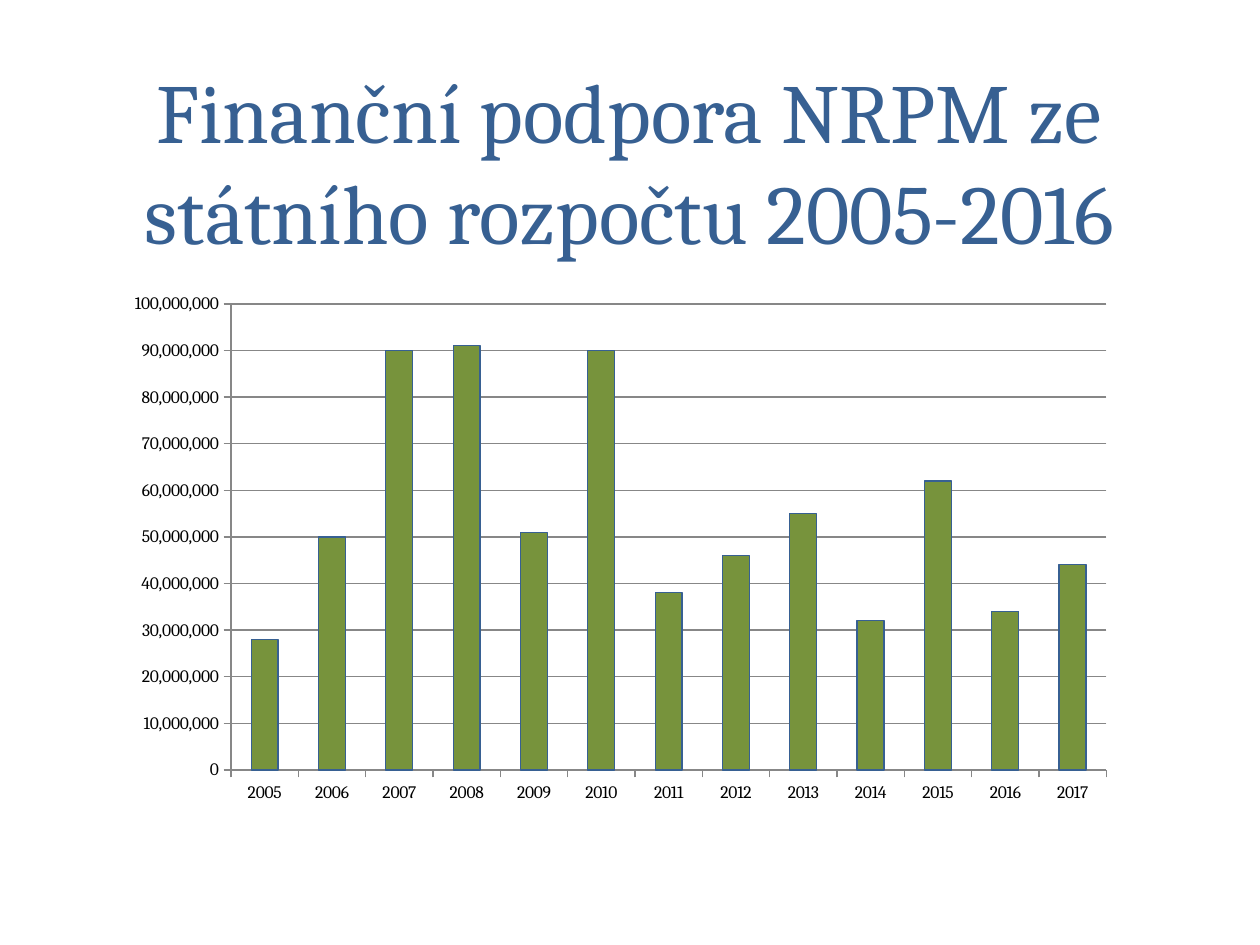
import pptx
import pptx.chart.data
import pptx.dml.color
import pptx.enum.chart
import pptx.enum.text
import pptx.util
from pptx.util import Pt

TITLE = "Finanční podpora NRPM ze státního rozpočtu 2005-2016"
FIRST_YEAR = 2005
MILLIONS = [28, 50, 90, 91, 51, 90, 38, 46, 55, 32, 62, 34, 44]
FONT = "Cambria"
BLUE, GREEN, GREY, BLACK = "376092", "77933C", "878787", "000000"


def color(hex_code):
    return pptx.dml.color.RGBColor.from_string(hex_code)


def style_font(font, size, hex_code):
    font.name = FONT
    font.size = Pt(size)
    font.color.rgb = color(hex_code)


def style_line(line, hex_code):
    line.color.rgb = color(hex_code)
    line.width = Pt(0.75)


def add_title(page):
    title = page.shapes.title
    title.left, title.top, title.width, title.height = Pt(43.2), Pt(34.6), Pt(632.9), Pt(113.8)
    frame = title.text_frame
    frame.text = TITLE
    frame.word_wrap = True
    frame.auto_size = pptx.enum.text.MSO_AUTO_SIZE.NONE
    frame.vertical_anchor = pptx.enum.text.MSO_ANCHOR.MIDDLE
    para = frame.paragraphs[0]
    para.alignment = pptx.enum.text.PP_ALIGN.CENTER
    style_font(para.font, 48, BLUE)


def add_support_chart(page):
    data = pptx.chart.data.CategoryChartData(number_format="#,##0")
    data.categories = [str(FIRST_YEAR + i) for i in range(len(MILLIONS))]
    data.add_series("Series 1", [value * 1_000_000 for value in MILLIONS])
    chart = page.shapes.add_chart(
        pptx.enum.chart.XL_CHART_TYPE.COLUMN_CLUSTERED,
        Pt(65.5), Pt(162), Pt(578.2), Pt(302.4), data).chart
    chart.has_legend = False
    chart.has_title = False
    style_font(chart.font, 10, BLACK)

    plot = chart.plots[0]
    plot.gap_width = 150
    plot.vary_by_categories = False
    columns = plot.series[0].format
    columns.fill.solid()
    columns.fill.fore_color.rgb = color(GREEN)
    style_line(columns.line, BLUE)

    for axis in (chart.category_axis, chart.value_axis):
        axis.major_tick_mark = pptx.enum.chart.XL_TICK_MARK.OUTSIDE
        axis.minor_tick_mark = pptx.enum.chart.XL_TICK_MARK.NONE
        style_line(axis.format.line, GREY)
    amounts = chart.value_axis
    amounts.minimum_scale, amounts.maximum_scale = 0, 100_000_000
    amounts.major_unit = 10_000_000
    amounts.tick_labels.number_format = "#,##0"
    amounts.tick_labels.number_format_is_linked = False
    amounts.has_major_gridlines = True
    style_line(amounts.major_gridlines.format.line, GREY)


deck = pptx.Presentation()
deck.slide_width, deck.slide_height = Pt(720), Pt(540)
page = deck.slides.add_slide(deck.slide_layouts.get_by_name("Title Only"))
add_title(page)
add_support_chart(page)
deck.save("out.pptx")
